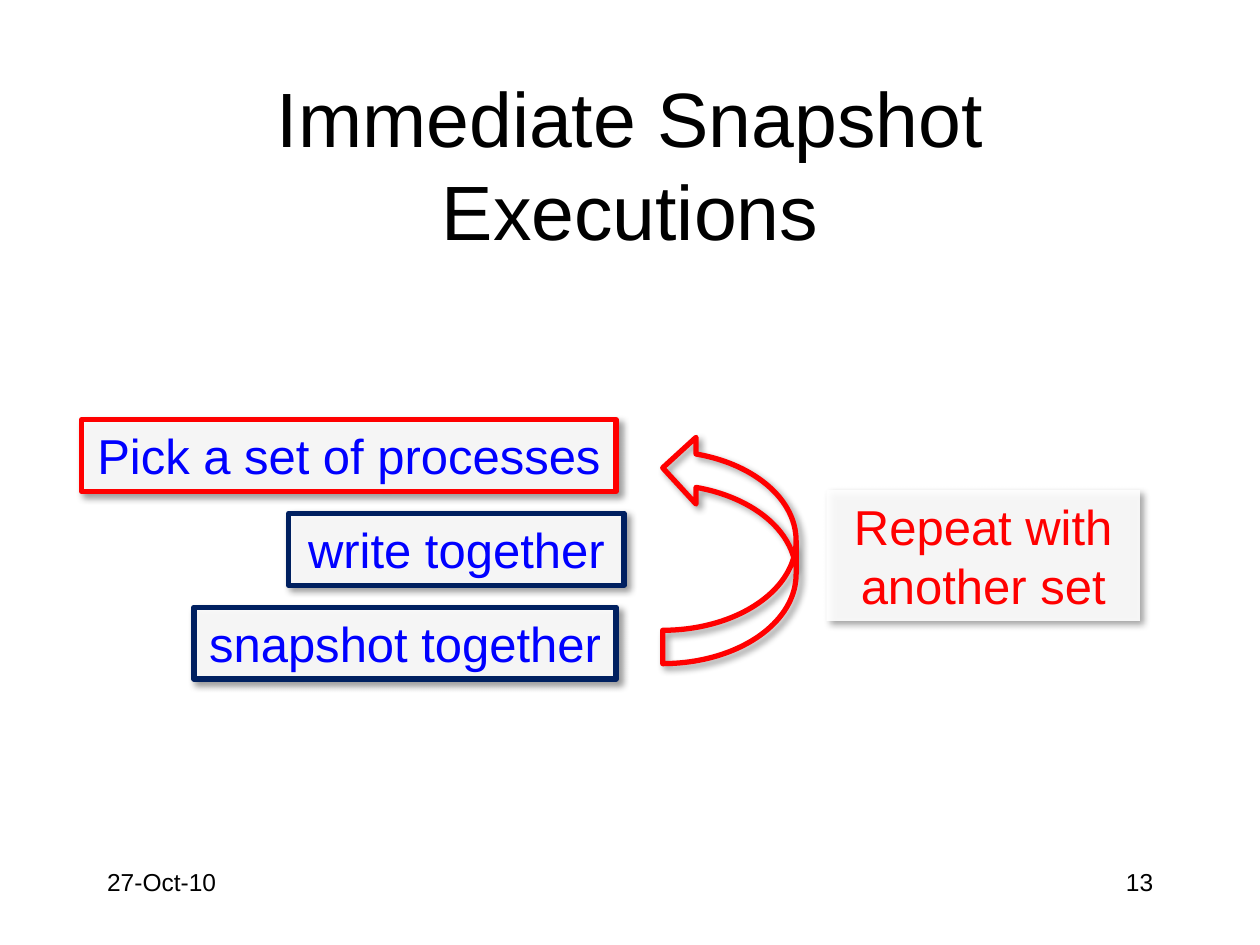
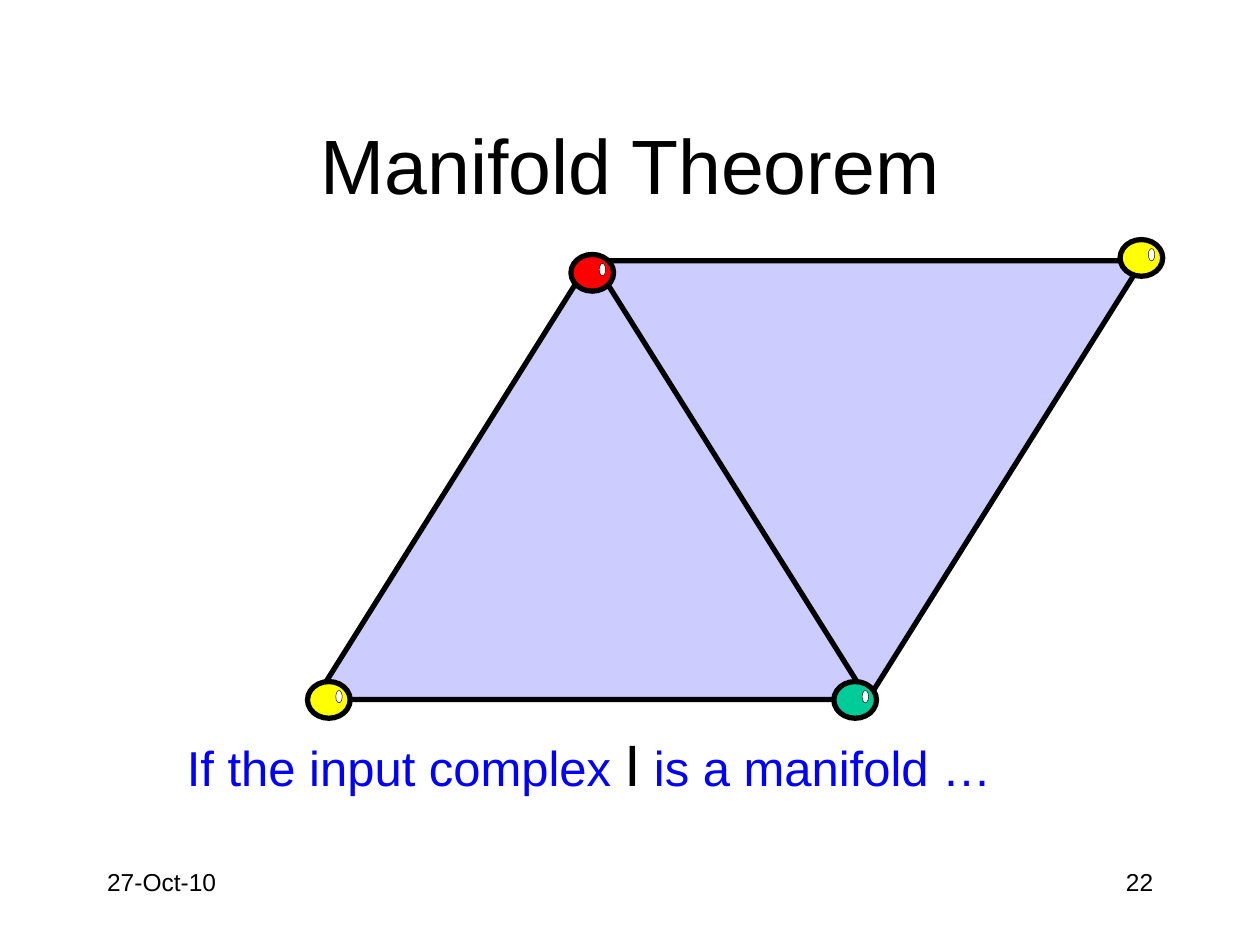
from dataclasses import dataclass

from pptx import Presentation
from pptx.dml.color import RGBColor
from pptx.enum.shapes import MSO_SHAPE
from pptx.enum.text import MSO_ANCHOR, MSO_AUTO_SIZE, PP_ALIGN
from pptx.oxml import parse_xml
from pptx.oxml.ns import nsdecls, qn
from pptx.util import Cm, Pt

RECTANGLE = MSO_SHAPE.RECTANGLE
TRIANGLE = MSO_SHAPE.ISOSCELES_TRIANGLE
OVAL = MSO_SHAPE.OVAL
CURVED_ARROW = MSO_SHAPE.CURVED_LEFT_ARROW
LEFT, CENTER, RIGHT = PP_ALIGN.LEFT, PP_ALIGN.CENTER, PP_ALIGN.RIGHT
TOP, MIDDLE = MSO_ANCHOR.TOP, MSO_ANCHOR.MIDDLE


@dataclass(frozen=True)
class Theme:
    font: str = "Arial"
    symbol_font: str = "Lato"
    title_size: float = 44
    symbol_size: float = 32
    body_size: float = 28
    footer_size: float = 14
    outline: float = 3
    hairline: float = 0.25
    black: str = "000000"
    white: str = "FFFFFF"
    blue: str = "0000FF"
    navy: str = "002060"
    red: str = "FF0000"
    yellow: str = "FFFF00"
    green: str = "00CC99"
    lavender: str = "CCCCFF"


THEME = Theme()

# Content: positions and sizes in centimetres
DATE = "27-Oct-10"
TITLE_BOX = (1.91, 1.7, 21.59, 3.18)
FOOTER_TOP, FOOTER_WIDTH, FOOTER_HEIGHT = 17.35, 5.28, 1.27

STEPS = [  # text, left, width, border
    ("Pick a set of processes", 1.65, 10.77, THEME.red),
    ("write together", 5.82, 6.76, THEME.navy),
    ("snapshot together", 3.91, 8.51, THEME.navy),
]
STEP_TOP, STEP_HEIGHT, STEP_PITCH = 8.46, 1.45, 1.89
REPEAT_ARROW = (13.36, 8.76, 2.69, 4.62)
REPEAT_TEXT, REPEAT_BOX = "Repeat with another set", (16.66, 9.88, 6.32, 2.64)

TRIANGLES = [  # left, top, points down
    (11.89, 5.26, True),
    (6.35, 5.21, False),
]
TRIANGLE_SIZE = (11.15, 8.89)
VERTICES = [  # left, top, colour
    (16.81, 13.74, THEME.green),
    (6.2, 13.74, THEME.yellow),
    (11.51, 5.13, THEME.red),
    (22.58, 4.83, THEME.yellow),
]
VERTEX_SIZE = (0.86, 0.74)
GLINT_OFFSET, GLINT_SIZE = (0.57, 0.18), (0.13, 0.25)
CAPTION_BOX = (3.33, 14.61, 17.09, 1.63)
CAPTION = [  # text, font, size, colour
    ("If the input complex ", THEME.font, THEME.body_size, THEME.blue),
    ("I", THEME.symbol_font, THEME.symbol_size, THEME.black),
    (" is a manifold …", THEME.font, THEME.body_size, THEME.blue),
]


# Shared helpers
def lengths(box):
    return [Cm(value) for value in box]


def write(shape, runs, alignment, anchor=TOP, wrap=True):
    frame = shape.text_frame
    frame.word_wrap = wrap
    frame.auto_size = MSO_AUTO_SIZE.NONE
    frame.vertical_anchor = anchor
    paragraph = frame.paragraphs[0]
    paragraph.alignment = alignment
    for text, font, size, color in runs:
        run = paragraph.add_run()
        run.text = text
        run.font.name = font
        run.font.size = Pt(size)
        run.font.color.rgb = RGBColor.from_string(color)


def add_figure(slide, kind, box, fill=None, line=None, width=THEME.outline):
    shape = slide.shapes.add_shape(kind, *lengths(box))
    shape.shadow.inherit = False
    if fill:
        shape.fill.solid()
        shape.fill.fore_color.rgb = RGBColor.from_string(fill)
    else:
        shape.fill.background()
    if line:
        shape.line.color.rgb = RGBColor.from_string(line)
        shape.line.width = Pt(width)
    else:
        shape.line.fill.background()
    return shape


def flip_vertically(shape):
    shape.element.spPr.find(qn("a:xfrm")).set("flipV", "1")


def cast_shadow(shape):
    shape.element.spPr.find(qn("a:effectLst")).append(parse_xml(
        f'<a:outerShdw {nsdecls("a")} blurRad="{Pt(4)}" dist="{Pt(3)}" '
        'dir="2700000" algn="tl" rotWithShape="0">'
        f'<a:srgbClr val="{THEME.black}"><a:alpha val="40000"/></a:srgbClr>'
        '</a:outerShdw>'))


def add_card(slide, text, box, color, border=None, wrap=True):
    card = add_figure(slide, RECTANGLE, box, THEME.white, border)
    fill_color = card.element.spPr.find(qn("a:solidFill"))[0]
    fill_color.append(parse_xml(f'<a:alpha {nsdecls("a")} val="90000"/>'))
    cast_shadow(card)
    write(card, [(text, THEME.font, THEME.body_size, color)], CENTER, wrap=wrap)


def add_titled_slide(presentation, title, number):
    slide = presentation.slides.add_slide(presentation.slide_layouts[5])
    heading = slide.shapes.title
    heading.left, heading.top, heading.width, heading.height = lengths(TITLE_BOX)
    write(heading, [(title, THEME.font, THEME.title_size, THEME.black)],
          CENTER, MIDDLE)
    right_edge = TITLE_BOX[0] + TITLE_BOX[2]
    for text, left, alignment in (
            (DATE, TITLE_BOX[0], LEFT),
            (str(number), right_edge - FOOTER_WIDTH, RIGHT)):
        footer = slide.shapes.add_textbox(
            *lengths((left, FOOTER_TOP, FOOTER_WIDTH, FOOTER_HEIGHT)))
        write(footer, [(text, THEME.font, THEME.footer_size, THEME.black)],
              alignment)
    return slide


# Slides
def build_snapshot_slide(presentation):
    slide = add_titled_slide(presentation, "Immediate Snapshot Executions", 13)
    for index, (text, left, width, border) in enumerate(STEPS):
        top = STEP_TOP + index * STEP_PITCH
        add_card(slide, text, (left, top, width, STEP_HEIGHT),
                 THEME.blue, border, wrap=False)
    arrow = add_figure(slide, CURVED_ARROW, REPEAT_ARROW, line=THEME.red)
    flip_vertically(arrow)
    cast_shadow(arrow)
    add_card(slide, REPEAT_TEXT, REPEAT_BOX, THEME.red)


def build_manifold_slide(presentation):
    slide = add_titled_slide(presentation, "Manifold Theorem", 22)
    for left, top, points_down in TRIANGLES:
        triangle = add_figure(slide, TRIANGLE, (left, top, *TRIANGLE_SIZE),
                              THEME.lavender, THEME.black)
        if points_down:
            flip_vertically(triangle)
    for left, top, color in VERTICES:
        add_figure(slide, OVAL, (left, top, *VERTEX_SIZE), color, THEME.black)
        glint = (left + GLINT_OFFSET[0], top + GLINT_OFFSET[1], *GLINT_SIZE)
        add_figure(slide, OVAL, glint, THEME.white, THEME.black, THEME.hairline)
    caption = slide.shapes.add_textbox(*lengths(CAPTION_BOX))
    write(caption, CAPTION, CENTER)


def main():
    presentation = Presentation()
    presentation.slide_width, presentation.slide_height = Cm(25.4), Cm(19.05)
    build_snapshot_slide(presentation)
    build_manifold_slide(presentation)
    presentation.save("out.pptx")


if __name__ == "__main__":
    main()
